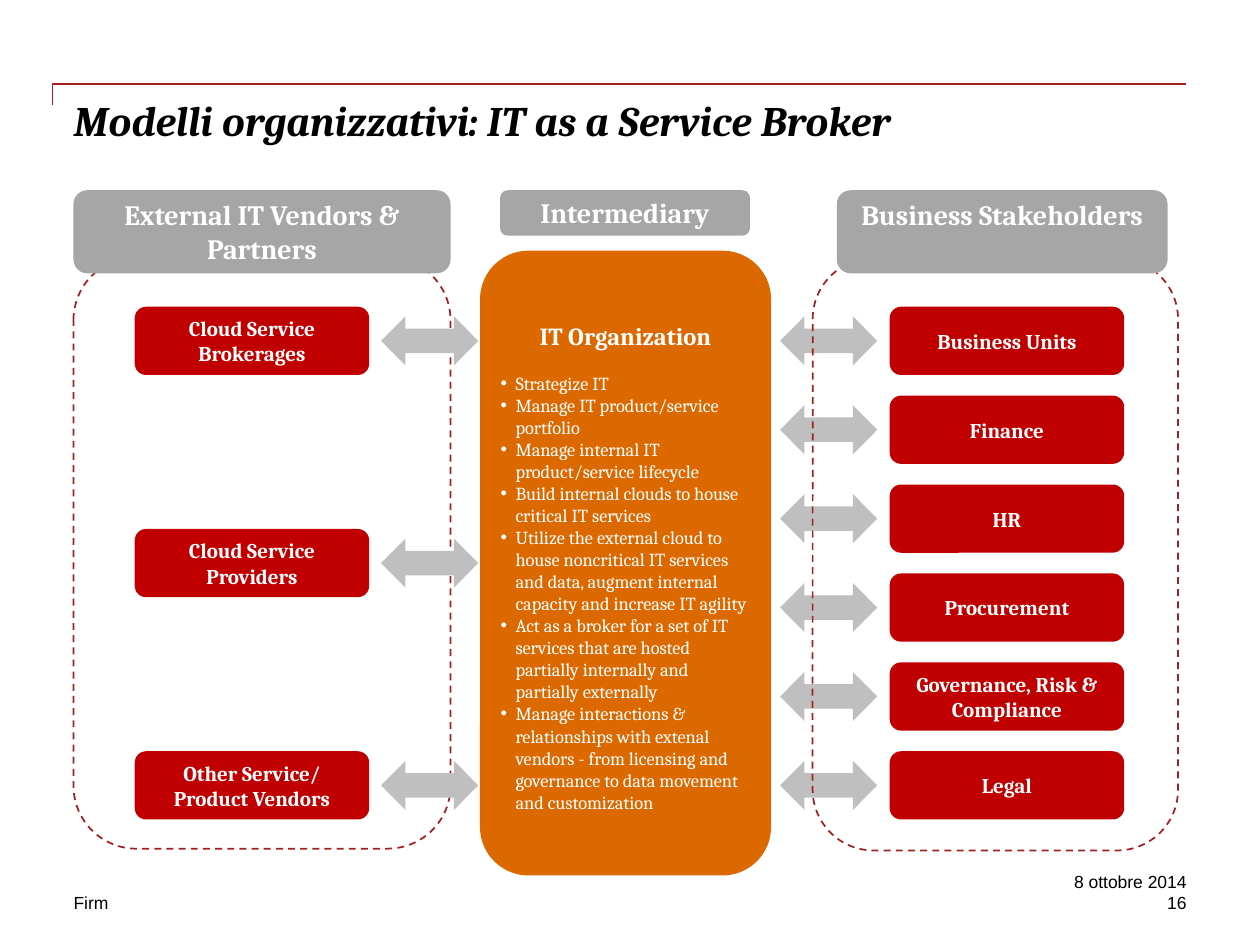
from lxml.etree import SubElement
from pptx import Presentation
from pptx.dml.color import RGBColor
from pptx.enum.dml import MSO_LINE as Dash
from pptx.enum.shapes import MSO_SHAPE as Shape
from pptx.enum.text import MSO_ANCHOR as Anchor, PP_ALIGN as Align
from pptx.oxml.ns import qn
from pptx.util import Pt

COLORS = {"rule": "A32020", "broker": "DC6900", "header": "A6A6A6",
          "arrow": "BFBFBF", "card": "C00000", "white": "FFFFFF", "black": "000000"}
CARD_W, CARD_H = 134, 39
ARROW_W, ARROW_H = 55.5, 28
FIRST_ROW, LAST_ROW = 194.8, 448.8  # vertical centres of the outer rows

VENDORS = ["Cloud Service Brokerages", "Cloud Service Providers",
           "Other Service/ Product Vendors"]
STAKEHOLDERS = ["Business Units", "Finance", "HR", "Procurement",
                "Governance, Risk & Compliance", "Legal"]
DUTIES = [
    "Strategize IT",
    "Manage IT product/service portfolio",
    "Manage internal IT product/service lifecycle",
    "Build internal clouds to house critical IT services",
    "Utilize the external cloud to house noncritical IT services and data, "
    "augment internal capacity and increase IT agility",
    "Act as a broker for a set of IT services that are hosted partially "
    "internally and partially externally",
    "Manage interactions & relationships with extenal vendors - from licensing "
    "and governance to data movement and customization",
]


def rgb(name):
    return RGBColor.from_string(COLORS[name])


def set_frame(frame, margins, anchor):
    left, top, right, bottom = margins
    values = {"word_wrap": True, "vertical_anchor": anchor,
              "margin_left": Pt(left), "margin_top": Pt(top),
              "margin_right": Pt(right), "margin_bottom": Pt(bottom)}
    for name, value in values.items():
        setattr(frame, name, value)


def write(para, text, size, color="white", align=Align.CENTER, **font):
    para.alignment = align
    span = para.add_run()
    span.text = text
    values = {"name": "Cambria", "size": Pt(size), "bold": True, **font}
    for name, value in values.items():
        setattr(span.font, name, value)
    span.font.color.rgb = rgb(color)


def add_block(page, kind, box, fill=None):
    block = page.shapes.add_shape(kind, *map(Pt, box))
    block.shadow.inherit = False
    block.line.fill.background()
    if fill:
        block.fill.solid()
        block.fill.fore_color.rgb = rgb(fill)
    else:
        block.fill.background()
    return block


def add_label(page, box, text, size, fill, margins, anchor):
    block = add_block(page, Shape.ROUNDED_RECTANGLE, box, fill)
    set_frame(block.text_frame, margins, anchor)
    write(block.text_frame.paragraphs[0], text, size)


def add_header(page, box, text):
    add_label(page, box, text, 16, "header", (3.6, 2, 3.6, 2), Anchor.TOP)


def add_bullet(para):
    props = para._p.get_or_add_pPr()
    props.set("marL", str(Pt(8.6)))
    props.set("indent", str(-Pt(8.6)))
    SubElement(props, qn("a:buFont"), typeface="Arial")
    SubElement(props, qn("a:buChar"), char="•")


def add_title(page, box):
    left, top, width, height = box
    # Bent rule above the title
    builder = page.shapes.build_freeform(Pt(left - 12), Pt(top + 6))
    builder.add_line_segments([(Pt(left - 12), Pt(top - 6)),
                               (Pt(left + width), Pt(top - 6))], close=False)
    rule = builder.convert_to_shape()
    rule.shadow.inherit = False
    rule.fill.background()
    rule.line.color.rgb = rgb("rule")
    rule.line.width = Pt(1)
    # Title text
    title = page.shapes.title
    for name, value in zip(("left", "top", "width", "height"), box):
        setattr(title, name, Pt(value))
    set_frame(title.text_frame, (0, 0, 0, 0), Anchor.TOP)
    write(title.text_frame.paragraphs[0], "Modelli organizzativi: IT as a Service Broker",
          24, "black", Align.LEFT, italic=True)


def add_broker(page, box):
    left, top, width, _ = box
    block = add_block(page, Shape.ROUNDED_RECTANGLE, box, "broker")
    frame = block.text_frame
    set_frame(frame, (3.6, 18.8, 3.6, 14.6), Anchor.MIDDLE)
    heading = frame.paragraphs[0]
    heading.space_after = Pt(12.6)
    write(heading, "IT Organization", 14)
    for duty in DUTIES:
        para = frame.add_paragraph()
        write(para, duty, 10.5, align=Align.LEFT, bold=False)
        add_bullet(para)
    add_header(page, (left + 11.5, top - 34.6, width - 23.5, 26), "Intermediary")


def add_frame(page, box):
    frame = add_block(page, Shape.ROUNDED_RECTANGLE, box)
    frame.line.color.rgb = rgb("rule")
    frame.line.width = Pt(1)
    frame.line.dash_style = Dash.DASH


def add_arrows(page, left, centers):
    for center in centers:
        arrow = add_block(page, Shape.LEFT_RIGHT_ARROW,
                          (left, center - ARROW_H / 2, ARROW_W, ARROW_H), "arrow")
        arrow.adjustments[1] = 0.495


def add_party(page, box, header, header_box, names, card_x, arrow_x, arrows_behind):
    """Dashed frame with a header, evenly spaced cards and their arrows."""
    left, top, _, _ = box
    step = (LAST_ROW - FIRST_ROW) / (len(names) - 1)
    centers = [FIRST_ROW + step * row for row in range(len(names))]
    if arrows_behind:
        add_arrows(page, left + arrow_x, centers)
    add_frame(page, box)
    if not arrows_behind:
        add_arrows(page, left + arrow_x, centers)
    dx, dy, width, height = header_box
    add_header(page, (left + dx, top + dy, width, height), header)
    for name, center in zip(names, centers):
        add_label(page, (left + card_x, center - CARD_H / 2, CARD_W, CARD_H),
                  name, 12, "card", (7.2, 3.6, 7.2, 3.6), Anchor.MIDDLE)


def add_footer(page, box):
    left, top, width, height = box
    side = 120
    right = left + width - side
    for text, x, y, align in (("Firm", left, top + 12, Align.LEFT),
                              ("8 ottobre 2014", right, top, Align.RIGHT),
                              ("16", right, top + 12, Align.RIGHT)):
        note = page.shapes.add_textbox(Pt(x), Pt(y), Pt(side), Pt(height / 2))
        set_frame(note.text_frame, (0, 0, 0, 0), Anchor.TOP)
        write(note.text_frame.paragraphs[0], text, 10, "black", align,
              name="Arial", bold=False)


def main():
    deck = Presentation()
    deck.slide_width, deck.slide_height = Pt(720), Pt(540)
    page = deck.slides.add_slide(deck.slide_layouts[5])
    add_title(page, (42, 54, 636, 72))
    add_broker(page, (274.3, 143.3, 166.3, 357))
    add_party(page, (42, 147, 215.5, 338), "External IT Vendors & Partners",
              (0, -38.3, 215.5, 47.5), VENDORS, 35, 175.8, False)
    add_party(page, (464.4, 147.6, 208.8, 338.4), "Business Stakeholders",
              (13.8, -38.9, 189, 47.5), STAKEHOLDERS, 44, -18.6, True)
    add_footer(page, (42, 498, 636, 24))
    deck.save("out.pptx")


if __name__ == "__main__":
    main()
